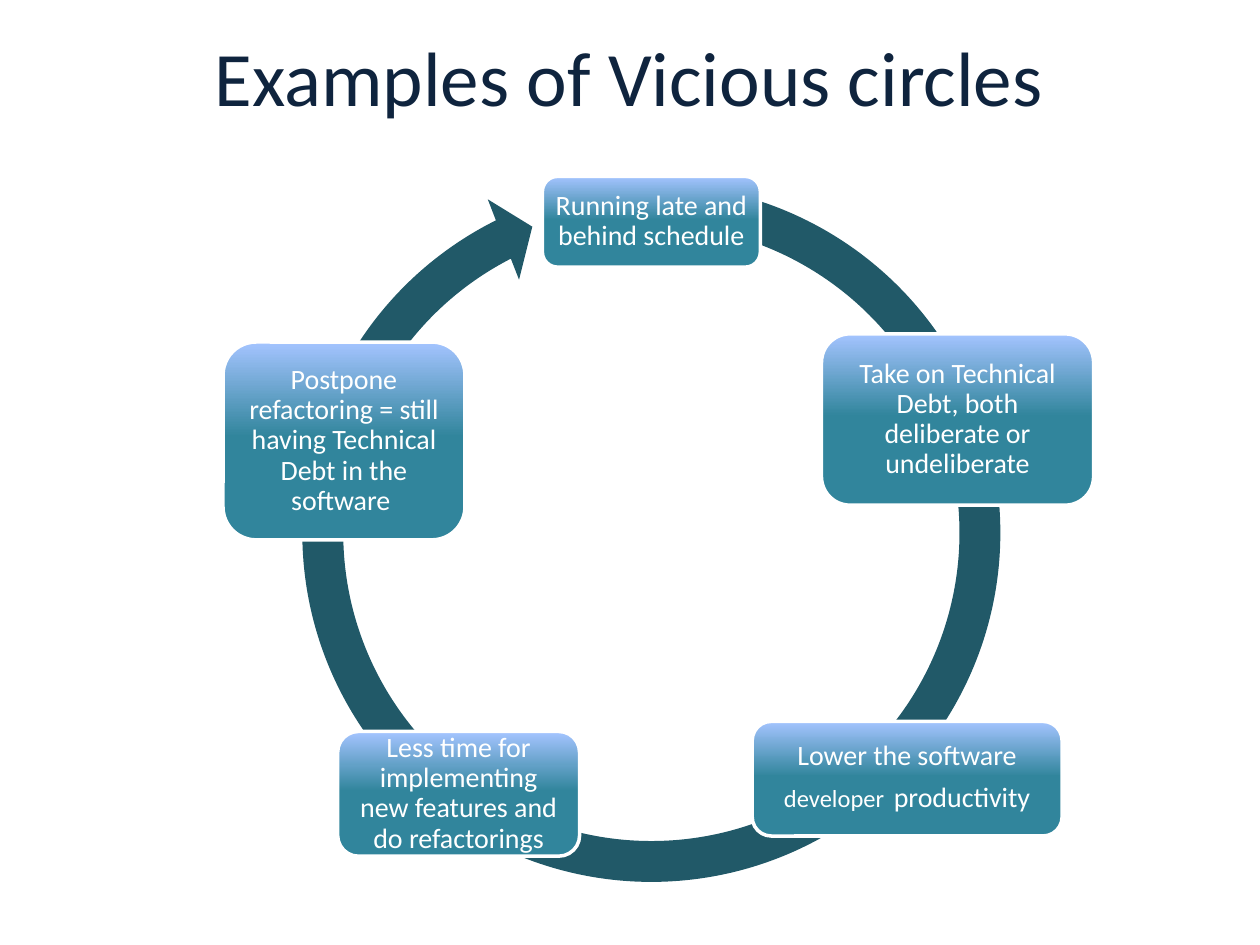
from pptx import Presentation
from pptx.dml.color import RGBColor
from pptx.enum.shapes import MSO_SHAPE as Shape
from pptx.enum.text import MSO_ANCHOR as Anchor, PP_ALIGN as Align
from pptx.util import Inches, Pt

TITLE = "Examples of Vicious circles"
# Each step: centre x, centre y, width, height (inches), then (text, points) runs
STEPS = [
    (5.17, 1.76, 1.73, 0.72, [("Running late and behind schedule ", 16)]),
    (7.6, 3.33, 2.16, 1.36,
     [("Take on Technical Debt, both deliberate or undeliberate", 16)]),
    (7.2, 6.18, 2.46, 0.91,
     [("Lower the software ", 16), ("developer", 14), (" ", 24), ("productivity", 16)]),
    (3.64, 6.3, 1.92, 0.99,
     [("Less time for implementing new features and do refactorings", 16)]),
    (2.73, 3.5, 1.92, 1.57,
     [("Postpone refactoring = still having Technical Debt in the software ", 16)]),
]
RING_CENTER = (5.17, 4.23)
RING_SIZE = 5.9
# Thickness, head angle, end angle, start angle, head width
RING_ADJUSTMENTS = (0.055, 3.307, 145.942, 169.055, 0.058)

FONT = "Calibri"
NAVY = RGBColor(0x0F, 0x24, 0x3E)
DARK_TEAL = RGBColor(0x21, 0x59, 0x68)
TEAL = RGBColor(0x31, 0x85, 0x9C)
LIGHT_BLUE = RGBColor(0xA4, 0xC4, 0xFF)
WHITE = RGBColor(0xFF, 0xFF, 0xFF)


def add_centered_shape(slide, kind, x, y, width, height):
    shape = slide.shapes.add_shape(kind, Inches(x - width / 2), Inches(y - height / 2),
                                   Inches(width), Inches(height))
    shape.shadow.inherit = False
    return shape


def add_title(slide):
    title = slide.shapes.title
    title.left, title.top = Inches(0.39), Inches(0.01)
    title.width, title.height = Inches(9.21), Inches(1.18)
    title.text_frame.text = TITLE
    title.text_frame.vertical_anchor = Anchor.MIDDLE
    paragraph = title.text_frame.paragraphs[0]
    paragraph.alignment = Align.CENTER
    paragraph.font.name, paragraph.font.size = FONT, Pt(44)
    paragraph.font.color.rgb = NAVY


def add_ring(slide):
    ring = add_centered_shape(slide, Shape.CIRCULAR_ARROW, *RING_CENTER, RING_SIZE, RING_SIZE)
    for index, value in enumerate(RING_ADJUSTMENTS):
        ring.adjustments[index] = value
    ring.fill.solid()
    ring.fill.fore_color.rgb = DARK_TEAL
    ring.line.fill.background()


def add_step(slide, x, y, width, height, runs):
    box = add_centered_shape(slide, Shape.ROUNDED_RECTANGLE, x, y, width, height)
    box.fill.gradient()
    box.fill.gradient_angle = 90
    stops = ((0.52, TEAL), (1, LIGHT_BLUE))
    for stop, (position, color) in zip(box.fill.gradient_stops, stops):
        stop.position, stop.color.rgb = position, color
    box.line.color.rgb = WHITE
    box.line.width = Pt(2)

    frame = box.text_frame
    frame.word_wrap = True
    frame.vertical_anchor = Anchor.MIDDLE
    frame.margin_left = frame.margin_right = Inches(0.07)
    frame.margin_top = frame.margin_bottom = Inches(0.07)
    paragraph = frame.paragraphs[0]
    paragraph.alignment = Align.CENTER
    paragraph.line_spacing = 0.9
    paragraph.font.name = FONT
    paragraph.font.color.rgb = WHITE
    for text, size in runs:
        run = paragraph.add_run()
        run.text, run.font.size = text, Pt(size)


def main():
    presentation = Presentation()
    presentation.slide_width, presentation.slide_height = Inches(10), Inches(7.5)
    slide = presentation.slides.add_slide(presentation.slide_layouts.get_by_name("Title Only"))
    add_title(slide)
    add_ring(slide)
    for step in STEPS:
        add_step(slide, *step)
    presentation.save("out.pptx")


if __name__ == "__main__":
    main()
